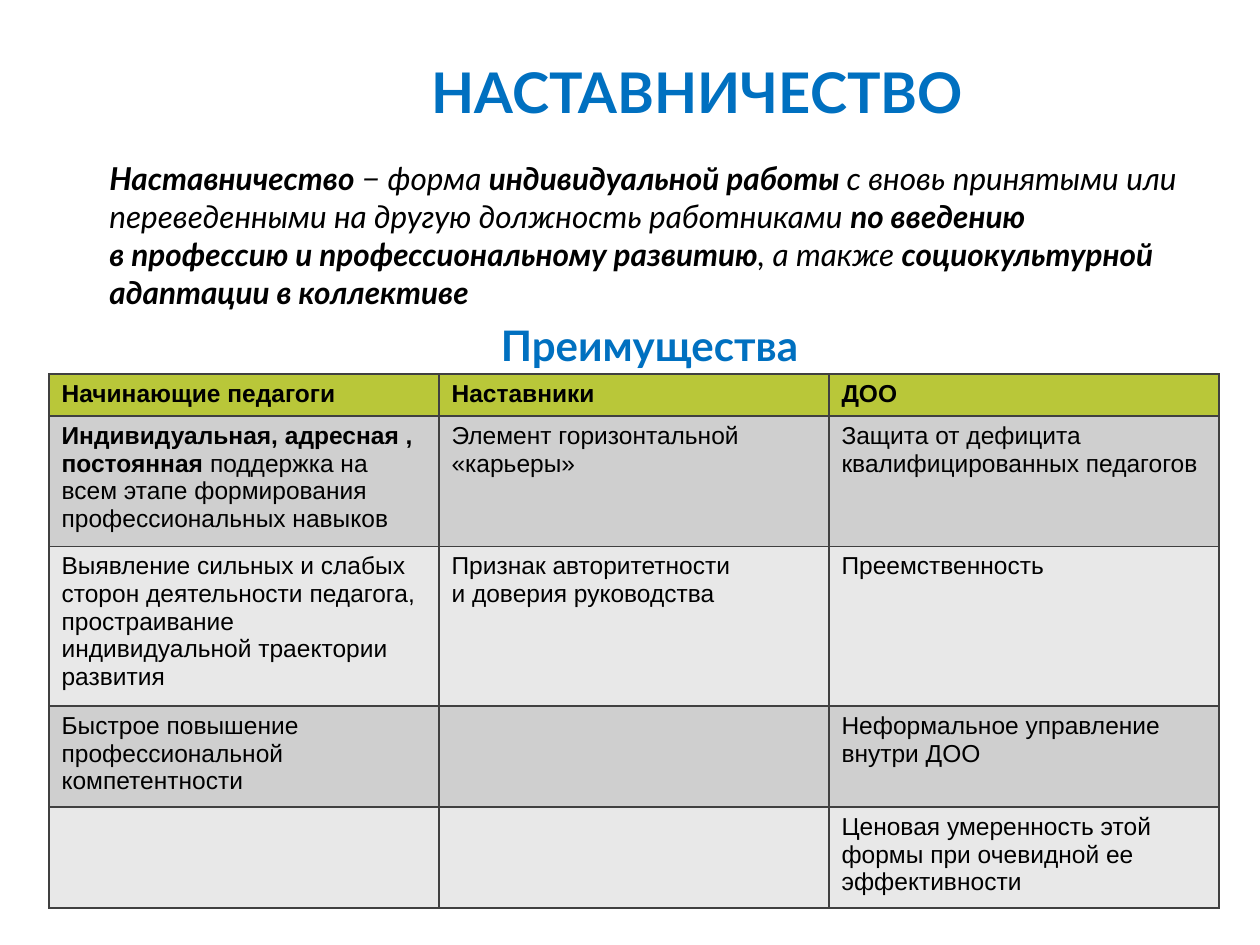
from dataclasses import dataclass

from lxml.etree import SubElement
from pptx import Presentation
from pptx.dml.color import RGBColor
from pptx.enum.text import MSO_ANCHOR, PP_ALIGN
from pptx.oxml.ns import qn
from pptx.util import Emu, Pt

EMU_PER_PX = 914400 // 126


@dataclass(frozen=True)
class Theme:
    heading_font: str = "Lato"
    table_font: str = "Arial"
    accent: str = "0070C0"
    ink: str = "000000"
    border: str = "404040"
    header_fill: str = "B9C739"
    band_fills: tuple = ("CFCFCF", "E8E8E8")
    title_size: int = 32
    subtitle_size: int = 24
    body_size: int = 18
    table_size: int = 14
    border_width: int = 1


THEME = Theme()

DEFINITION = [
    ("Наставничество", True),
    (" − форма ", False),
    ("индивидуальной работы ", True),
    ("с вновь принятыми или переведенными на другую должность работниками ", False),
    ("по введению\vв профессию и профессиональному развитию", True),
    (", а также ", False),
    ("социокультурной адаптации в коллективе", True),
]

HEADERS = ["Начинающие педагоги", "Наставники", "ДОО"]
BENEFITS = [
    [
        [
            ("Индивидуальная, адресная , постоянная ", True),
            ("поддержка на всем этапе формирования профессиональных навыков", False),
        ],
        "Элемент горизонтальной «карьеры»",
        "Защита от дефицита квалифицированных педагогов",
    ],
    [
        "Выявление сильных и слабых сторон деятельности педагога, "
        "простраивание индивидуальной траектории развития",
        "Признак авторитетности\nи доверия руководства",
        "Преемственность",
    ],
    [
        "Быстрое повышение профессиональной компетентности",
        "",
        "Неформальное управление внутри ДОО",
    ],
    ["", "", "Ценовая умеренность этой формы при очевидной ее эффективности"],
]
ROW_HEIGHTS = [40, 123, 150, 97, 95]
COLUMN_WIDTH = 390


def px(length):
    return Emu(length * EMU_PER_PX)


def style(paragraph, font_name, size, color, bold=None, italic=None):
    font = paragraph.font
    font.name = font_name
    font.size = Pt(size)
    font.color.rgb = RGBColor.from_string(color)
    font.bold = bold
    font.italic = italic


def add_mixed_runs(paragraph, parts):
    for text, bold in parts:
        for index, line in enumerate(text.split("\v")):
            if index:
                paragraph.add_line_break()
            run = paragraph.add_run()
            run.text = line
            run.font.bold = bold


def add_text_frame(slide, left, top, width, height, anchor=MSO_ANCHOR.TOP):
    frame = slide.shapes.add_textbox(px(left), px(top), px(width), px(height)).text_frame
    frame.word_wrap = True
    frame.vertical_anchor = anchor
    return frame


def write_heading(paragraph, text, size):
    paragraph.text = text
    paragraph.alignment = PP_ALIGN.CENTER
    style(paragraph, THEME.heading_font, size, THEME.accent, bold=True)


def add_title(slide):
    frame = add_text_frame(slide, 198, 60, 999, 63, MSO_ANCHOR.MIDDLE)
    write_heading(frame.paragraphs[0], "НАСТАВНИЧЕСТВО", THEME.title_size)


def add_definition(slide):
    frame = add_text_frame(slide, 97, 153, 1105, 220)
    definition = frame.paragraphs[0]
    add_mixed_runs(definition, DEFINITION)
    style(definition, THEME.heading_font, THEME.body_size, THEME.ink, italic=True)
    subtitle = frame.add_paragraph()
    write_heading(subtitle, "Преимущества", THEME.subtitle_size)
    subtitle.space_before = Pt(5)


def add_borders(cell):
    properties = cell._tc.get_or_add_tcPr()
    for side in ("lnL", "lnR", "lnT", "lnB"):
        line = SubElement(properties, qn(f"a:{side}"), w=str(Pt(THEME.border_width)))
        fill = SubElement(line, qn("a:solidFill"))
        SubElement(fill, qn("a:srgbClr"), val=THEME.border)


def fill_cell(cell, content, fill, bold):
    if isinstance(content, str):
        cell.text = content
    else:
        add_mixed_runs(cell.text_frame.paragraphs[0], content)
        bold = None
    for paragraph in cell.text_frame.paragraphs:
        style(paragraph, THEME.table_font, THEME.table_size, THEME.ink, bold)
    add_borders(cell)
    cell.fill.solid()
    cell.fill.fore_color.rgb = RGBColor.from_string(fill)


def add_benefits_table(slide):
    rows = [HEADERS, *BENEFITS]
    columns = len(HEADERS)
    table = slide.shapes.add_table(
        len(rows), columns, px(49), px(374), px(COLUMN_WIDTH * columns), px(sum(ROW_HEIGHTS))
    ).table
    for column in table.columns:
        column.width = px(COLUMN_WIDTH)
    for index, (contents, height) in enumerate(zip(rows, ROW_HEIGHTS)):
        table.rows[index].height = px(height)
        is_header = index == 0
        fill = THEME.header_fill if is_header else THEME.band_fills[(index - 1) % 2]
        for column, content in enumerate(contents):
            fill_cell(table.cell(index, column), content, fill, is_header)


def main():
    presentation = Presentation()
    presentation.slide_width = px(1260)
    presentation.slide_height = px(945)
    slide = presentation.slides.add_slide(presentation.slide_layouts[6])
    add_title(slide)
    add_definition(slide)
    add_benefits_table(slide)
    presentation.save("out.pptx")


if __name__ == "__main__":
    main()
